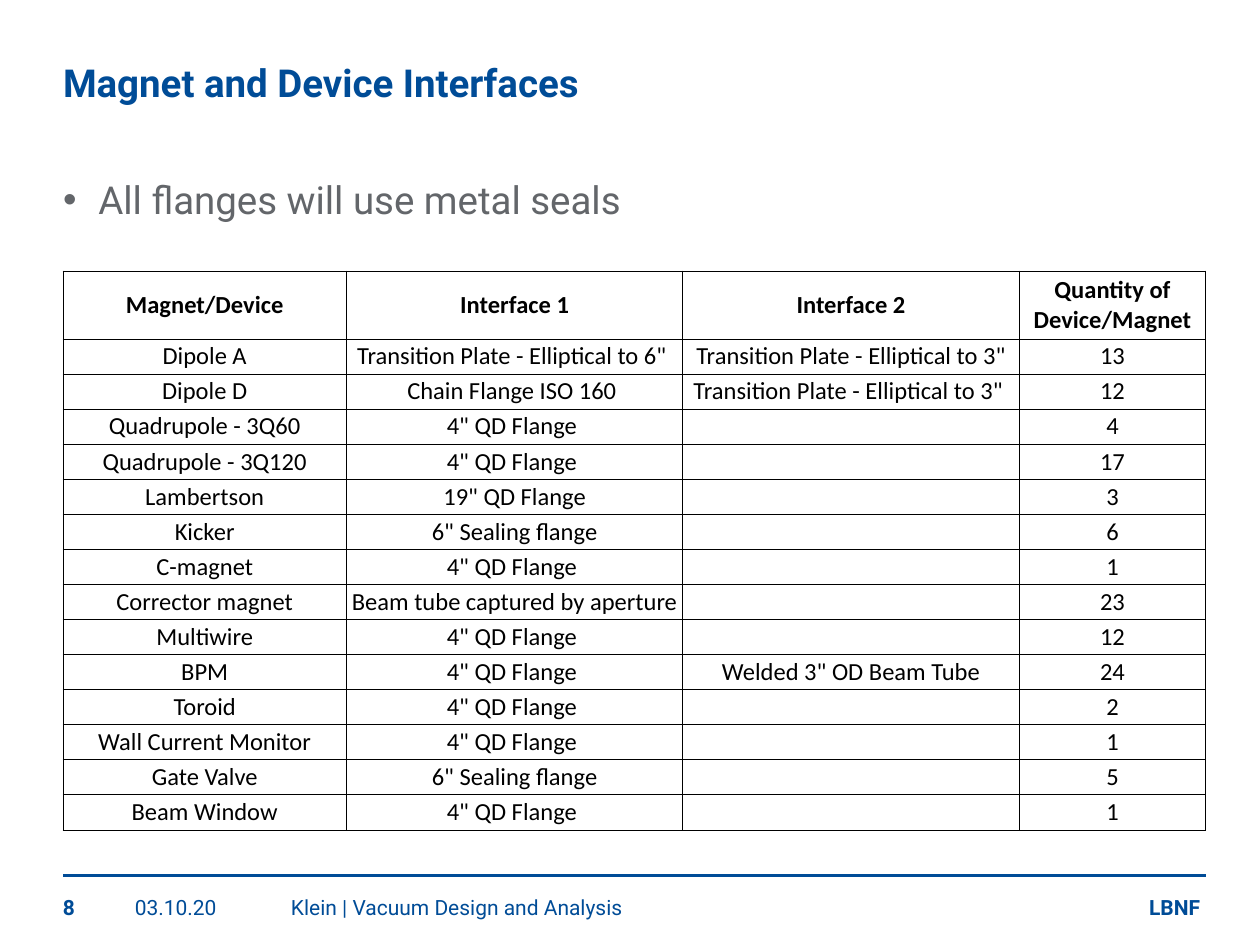
from lxml.etree import SubElement
from pptx import Presentation
from pptx.dml.color import RGBColor
from pptx.enum.shapes import MSO_CONNECTOR
from pptx.enum.text import MSO_ANCHOR, MSO_AUTO_SIZE, PP_ALIGN
from pptx.oxml import parse_xml
from pptx.oxml.ns import nsdecls, qn
from pptx.util import Inches, Pt

BLUE, GREY, BLACK = "004C97", "63666A", "000000"
LEFT, WIDTH = 0.5, 9.07
TABLE_TOP, TABLE_HEIGHT, HEADER_HEIGHT = 2.15, 4.44, 0.54
COLUMN_WIDTHS = [2.25, 2.67, 2.67, 1.48]
QD_FLANGE = '4" QD Flange '

TITLE = "Magnet and Device Interfaces"
BULLET = "All flanges will use metal seals"
FOOTER = [
    ("8", 0.5, 0.57, True),
    ("03.10.20", 1.07, 1.24, False),
    ("Klein | Vacuum Design and Analysis", 2.31, 6.14, False),
    ("LBNF", 9.12, 0.46, True),
]
ROWS = [
    ("Magnet/Device", "Interface 1", "Interface 2", "Quantity of Device/Magnet"),
    ("Dipole A", 'Transition Plate - Elliptical to 6" ', 'Transition Plate - Elliptical to 3"', "13"),
    ("Dipole D", "Chain Flange ISO 160 ", 'Transition Plate - Elliptical to 3" ', "12"),
    ("Quadrupole - 3Q60", QD_FLANGE, "", "4"),
    ("Quadrupole - 3Q120", QD_FLANGE, "", "17"),
    ("Lambertson", '19" QD Flange', "", "3"),
    ("Kicker", '6" Sealing flange', "", "6"),
    ("C-magnet", QD_FLANGE, "", "1"),
    ("Corrector magnet", "Beam tube captured by aperture", "", "23"),
    ("Multiwire", QD_FLANGE, "", "12"),
    ("BPM", QD_FLANGE, 'Welded 3" OD Beam Tube', "24"),
    ("Toroid", QD_FLANGE, "", "2"),
    ("Wall Current Monitor", QD_FLANGE, "", "1"),
    ("Gate Valve", '6" Sealing flange', "", "5"),
    ("Beam Window", QD_FLANGE, "", "1"),
]


def color(value):
    """Turn a hex string into a colour."""
    return RGBColor.from_string(value)


def style(para, size, name, hue, bold=False):
    """Set the font of a whole paragraph."""
    font = para.font
    font.size, font.name, font.bold = Pt(size), name, bold
    font.color.rgb = color(hue)


def place(box, left, top, width, height):
    """Move and size a shape, in inches."""
    box.left, box.top, box.width, box.height = map(Inches, (left, top, width, height))


def fill_frame(box, text, anchor, inset=0):
    """Write one left-aligned paragraph into a box and return it."""
    frame = box.text_frame
    frame.text = text
    frame.word_wrap, frame.auto_size = True, MSO_AUTO_SIZE.NONE
    frame.vertical_anchor = anchor
    frame.margin_left = frame.margin_right = 0
    frame.margin_top = frame.margin_bottom = Inches(inset)
    para = frame.paragraphs[0]
    para.alignment = PP_ALIGN.LEFT
    para.space_before = Pt(0)
    return para


def add_headings(page):
    """Fill the title and body placeholders."""
    title, body = page.shapes.title, page.placeholders[1]
    place(title, LEFT, 0.47, WIDTH, 0.62)
    style(fill_frame(title, TITLE, MSO_ANCHOR.TOP), 22, "Roboto", BLUE, True)
    place(body, LEFT, 1.35, WIDTH, 1.98)
    para = fill_frame(body, BULLET, MSO_ANCHOR.TOP, 0.05)
    props = para._p.get_or_add_pPr()
    props.set("marL", str(Inches(0.28)))
    props.set("indent", str(-Inches(0.28)))
    SubElement(props, qn("a:buFont")).set("typeface", "Arial")
    SubElement(props, qn("a:buChar")).set("char", "•")
    style(para, 22, "Roboto", GREY)


def add_footer(page):
    """Draw the rule and the footer texts."""
    rule = page.shapes.add_connector(
        MSO_CONNECTOR.STRAIGHT, Inches(LEFT), Inches(6.95), Inches(LEFT + WIDTH), Inches(6.95))
    rule.line.color.rgb, rule.line.width = color(BLUE), Pt(2)
    SubElement(rule._element.spPr, qn("a:effectLst"))
    for text, left, width, bold in FOOTER:
        box = page.shapes.add_textbox(*map(Inches, (left, 7.1, width, 0.2)))
        style(fill_frame(box, text, MSO_ANCHOR.BOTTOM), 12, "Roboto", BLUE, bold)


def format_cell(cell, text, bold):
    """Write a centred cell with thin borders and no fill."""
    cell.text = text
    cell.vertical_anchor = MSO_ANCHOR.MIDDLE
    cell.margin_left = cell.margin_right = cell.margin_top = cell.margin_bottom = 0
    para = cell.text_frame.paragraphs[0]
    para.alignment = PP_ALIGN.CENTER
    style(para, 14, "Calibri", BLACK, bold)
    if not text:
        para._p.get_or_add_endParaRPr().set("sz", "1400")
    props = cell._tc.get_or_add_tcPr()
    for side in "LRTB":
        props.append(parse_xml(
            f'<a:ln{side} {nsdecls("a")} w="{Pt(0.5)}"><a:solidFill>'
            f'<a:srgbClr val="{BLACK}"/></a:solidFill></a:ln{side}>'))
    cell.fill.background()


def add_interfaces(page):
    """Add the table of interfaces."""
    area = map(Inches, (LEFT, TABLE_TOP, WIDTH, TABLE_HEIGHT))
    table = page.shapes.add_table(len(ROWS), len(COLUMN_WIDTHS), *area).table
    table.first_row = table.horz_banding = False
    for column, width in zip(table.columns, COLUMN_WIDTHS):
        column.width = Inches(width)
    row_height = (TABLE_HEIGHT - HEADER_HEIGHT) / (len(ROWS) - 1)
    for index, (row, texts) in enumerate(zip(table.rows, ROWS)):
        row.height = Inches(row_height if index else HEADER_HEIGHT)
        for cell, text in zip(row.cells, texts):
            format_cell(cell, text, index == 0)


def main():
    """Build the slide and save it."""
    deck = Presentation()
    deck.slide_width, deck.slide_height = Inches(10), Inches(7.5)
    page = deck.slides.add_slide(deck.slide_layouts[1])
    add_headings(page)
    add_footer(page)
    add_interfaces(page)
    deck.save("out.pptx")


if __name__ == "__main__":
    main()
